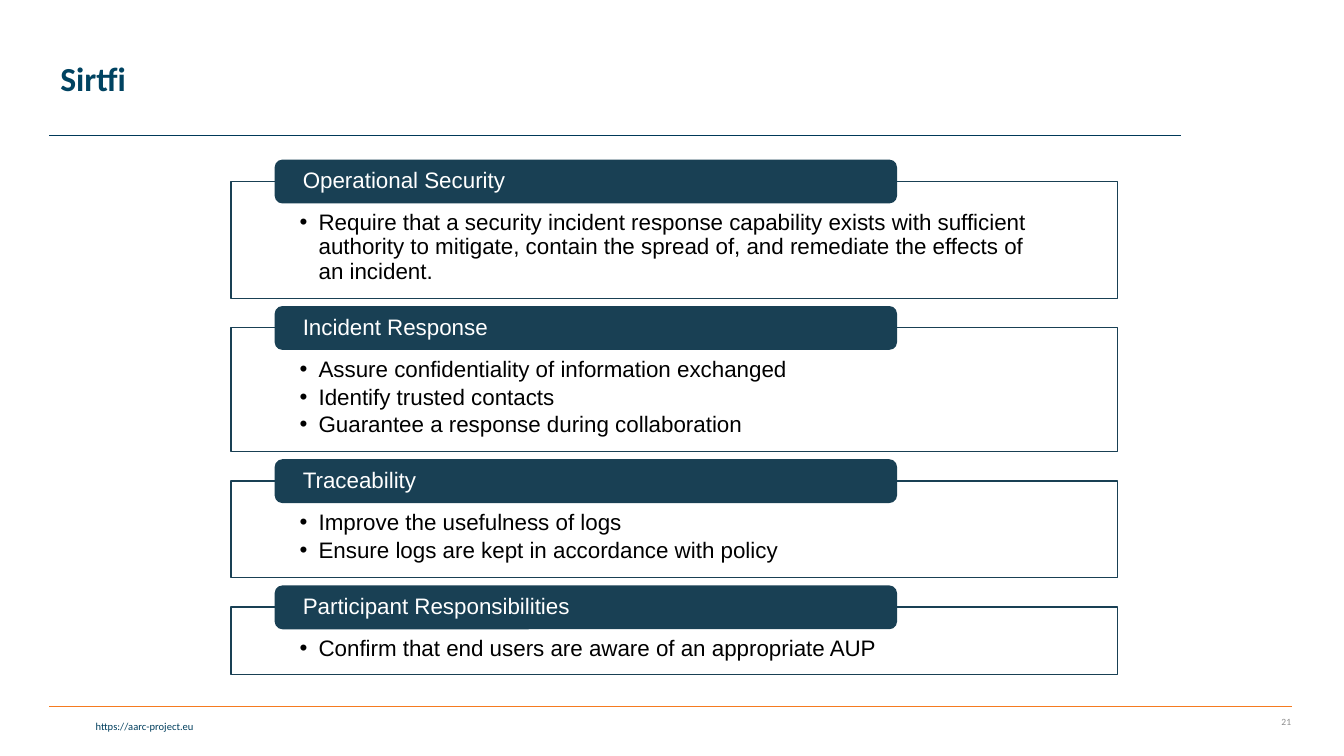
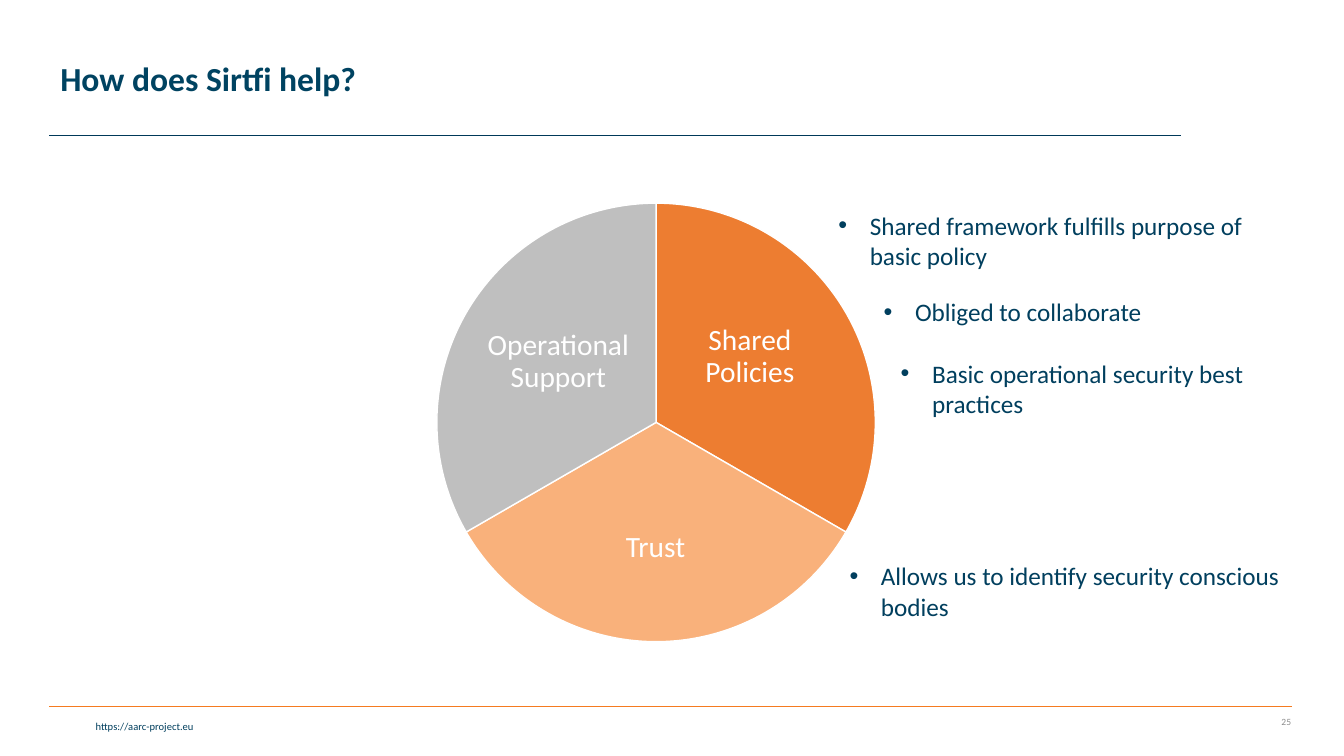
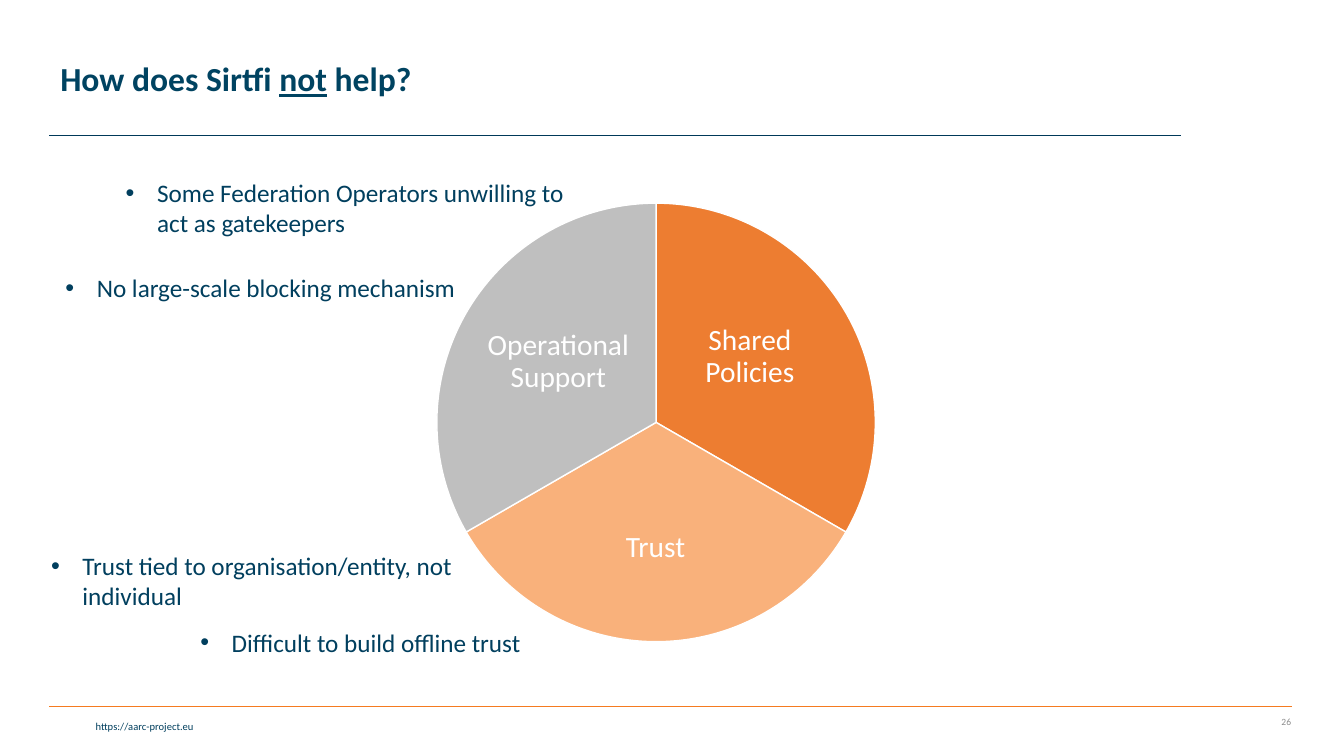
from lxml import etree
from pptx import Presentation
from pptx.dml.color import RGBColor
from pptx.enum.shapes import MSO_CONNECTOR, MSO_SHAPE
from pptx.enum.text import MSO_ANCHOR, MSO_AUTO_SIZE, PP_ALIGN
from pptx.oxml.ns import qn
from pptx.util import Cm, Pt

LEFT, CENTER, RIGHT = PP_ALIGN.LEFT, PP_ALIGN.CENTER, PP_ALIGN.RIGHT
TOP, MIDDLE = MSO_ANCHOR.TOP, MSO_ANCHOR.MIDDLE
RECTANGLE, ROUNDED = MSO_SHAPE.RECTANGLE, MSO_SHAPE.ROUNDED_RECTANGLE
PIE = MSO_SHAPE.PIE
STRAIGHT = MSO_CONNECTOR.STRAIGHT
NO_AUTOFIT = MSO_AUTO_SIZE.NONE
TITLE_ONLY = 5

# Palette
TITLE_BLUE = "004361"
RULE_BLUE = "003959"
FOOTER_BLUE = "003F5E"
TEXT_BLUE = "013F5E"
PANEL_BLUE = "194054"
RULE_ORANGE = "F57B20"
NUMBER_GRAY = "8C8C8C"
WHITE, BLACK = "FFFFFF", "000000"

# Panels of the first slide: heading, height, bullets
PANELS = [
    ("Operational Security", 2.95, [
        "Require that a security incident response capability exists with "
        "sufficient authority to mitigate, contain the spread of, and "
        "remediate the effects of an incident."]),
    ("Incident Response", 3.12, [
        "Assure confidentiality of information exchanged",
        "Identify trusted contacts",
        "Guarantee a response during collaboration"]),
    ("Traceability", 2.44, [
        "Improve the usefulness of logs",
        "Ensure logs are kept in accordance with policy"]),
    ("Participant Responsibilities", 1.7, [
        "Confirm that end users are aware of an appropriate AUP"]),
]
PANEL_TOP, PANEL_GAP = 4.57, 0.74

# Sectors of the circle: label, fill, opacity, start angle, label box
SECTORS = [
    ("Shared Policies", "ED7D31", 100, 270, (17.02, 7.16, 3.76, 3.68)),
    ("Trust", "F6791C", 58, 30, (14.02, 12.09, 5, 3.43)),
    ("Operational Support", "BFBFBF", 100, 150, (12.19, 7.29, 3.76, 3.68)),
]
SECTOR_ANGLE = 120
CIRCLE_BOX = (11.01, 5.12, 11.05, 11.05)

# Callouts around the circle: text, left, top, width, height
HELP_CALLOUTS = [
    ("Shared framework fulfills purpose of basic policy", 20.88, 5.16, 11.4, 1.8),
    ("Allows us to identify security conscious bodies", 21.16, 14, 11.68, 1.8),
    ("Obliged to collaborate", 22.02, 7.34, 11.4, 1.02),
    ("Basic operational security best practices", 22.45, 8.89, 11.4, 1.8),
]
LIMIT_CALLOUTS = [
    ("Some Federation Operators unwilling to act as gatekeepers",
     2.92, 4.34, 11.68, 1.8),
    ("Trust tied to organisation/entity, not individual", 1.04, 13.74, 11.68, 1.8),
    ("No large-scale blocking mechanism", 1.4, 6.73, 11.68, 1.02),
    ("Difficult to build offline trust", 4.8, 15.67, 11.68, 1.02),
]


def color(value):
    return RGBColor.from_string(value)


def add_bullet(paragraph, indent):
    properties = paragraph._p.get_or_add_pPr()
    properties.set("marL", str(Cm(indent)))
    properties.set("indent", str(-Cm(indent)))
    etree.SubElement(properties, qn("a:buFont"), typeface="Arial")
    etree.SubElement(properties, qn("a:buChar"), char="•")


def write(shape, paragraphs, size=18, ink=TEXT_BLUE, font="Calibri", bold=False,
          align=LEFT, anchor=TOP, insets=(0.25, 0.13, 0.25, 0.13), spacing=1.0,
          after=0, bullet_indent=0, underlined=""):
    """Fill a shape with formatted paragraphs, underlining one chosen word."""
    frame = shape.text_frame
    frame.word_wrap = True
    frame.auto_size = NO_AUTOFIT
    frame.vertical_anchor = anchor
    (frame.margin_left, frame.margin_top,
     frame.margin_right, frame.margin_bottom) = [Cm(inset) for inset in insets]
    for index, text in enumerate(paragraphs):
        paragraph = frame.add_paragraph() if index else frame.paragraphs[0]
        if bullet_indent:
            add_bullet(paragraph, bullet_indent)
        paragraph.alignment = align
        paragraph.line_spacing = spacing
        paragraph.space_after = Pt(after)
        for part in text.partition(underlined) if underlined else [text]:
            run = paragraph.add_run()
            run.text = part
            run.font.name = font
            run.font.size = Pt(size)
            run.font.bold = bold
            run.font.color.rgb = color(ink)
            if part == underlined:
                run.font.underline = True


class Deck:
    """Shared style plus the slide being built."""

    def __init__(self):
        self.presentation = Presentation()
        self.presentation.slide_width = Cm(33.87)
        self.presentation.slide_height = Cm(19.05)
        self.slide = None

    def new_slide(self, title, number, underlined=""):
        layout = self.presentation.slide_layouts[TITLE_ONLY]
        self.slide = self.presentation.slides.add_slide(layout)
        heading = self.slide.shapes.title
        heading.left, heading.top = Cm(1.27), Cm(0.2)
        heading.width, heading.height = Cm(26.7), Cm(3.68)
        write(heading, [title], size=24, ink=TITLE_BLUE, bold=True,
              anchor=MIDDLE, spacing=0.9, underlined=underlined)
        # Rules and footer
        self.rule(1.24, 29.77, 3.41, RULE_BLUE)
        self.rule(1.24, 32.56, 17.8, RULE_ORANGE)
        self.text((0.08, 18.01, 5.05, 0.58), ["https://aarc-project.eu"],
                  size=7.5, ink=FOOTER_BLUE, align=RIGHT)
        self.text((30.73, 17.8, 2.06, 0.76), [str(number)], size=6.8,
                  ink=NUMBER_GRAY, align=RIGHT, anchor=MIDDLE)

    def rule(self, start, end, top, ink):
        line = self.slide.shapes.add_connector(
            STRAIGHT, Cm(start), Cm(top), Cm(end), Cm(top))
        line.line.color.rgb = color(ink)
        line.line.width = Pt(1)
        etree.SubElement(line._element.spPr, qn("a:effectLst"))

    def text(self, box, paragraphs, **style):
        shape = self.slide.shapes.add_textbox(*[Cm(length) for length in box])
        write(shape, paragraphs, **style)

    def shape(self, kind, box, outline, fill=None, opacity=100):
        shape = self.slide.shapes.add_shape(kind, *[Cm(length) for length in box])
        shape.shadow.inherit = False
        shape.line.color.rgb = color(outline)
        shape.line.width = Pt(1)
        if fill is None:
            shape.fill.background()
        else:
            shape.fill.solid()
            shape.fill.fore_color.rgb = color(fill)
        if opacity < 100:
            value = shape._element.spPr.find(qn("a:solidFill")).find(qn("a:srgbClr"))
            etree.SubElement(value, qn("a:alpha"), val=str(opacity * 1000))
        return shape

    def panel(self, top, height, heading, bullets):
        frame = self.shape(RECTANGLE, (5.82, top, 22.35, height), PANEL_BLUE)
        write(frame, bullets, size=16, ink=BLACK, font="Arial", spacing=0.9,
              after=2.6, bullet_indent=0.48, insets=(1.73, 0.76, 1.73, 0.3))
        tab = self.shape(ROUNDED, (6.94, top - 0.53, 15.65, 1.07),
                         PANEL_BLUE, PANEL_BLUE)
        write(tab, [heading], size=16, ink=WHITE, font="Arial", spacing=0.9,
              anchor=MIDDLE, insets=(0.64, 0, 0.64, 0))

    def circle(self):
        for label, fill, opacity, start, box in SECTORS:
            sector = self.shape(PIE, CIRCLE_BOX, WHITE, fill, opacity)
            # Pie angles are stored in units of 0.6 per degree
            sector.adjustments[0] = start * 0.6
            sector.adjustments[1] = (start + SECTOR_ANGLE) % 360 * 0.6
            self.text(box, [label], size=21, ink=WHITE, align=CENTER,
                      anchor=MIDDLE, spacing=0.9, insets=(0.08,) * 4)

    def callouts(self, entries):
        for text, *box in entries:
            self.text(box, [text], bullet_indent=0.79)


def main():
    deck = Deck()

    # Four stacked panels
    deck.new_slide("Sirtfi", 21)
    top = PANEL_TOP
    for heading, height, bullets in PANELS:
        deck.panel(top, height, heading, bullets)
        top += height + PANEL_GAP

    # Circle with its benefits
    deck.new_slide("How does Sirtfi help?", 25)
    deck.circle()
    deck.callouts(HELP_CALLOUTS)

    # Circle with its limits
    deck.new_slide("How does Sirtfi not help?", 26, underlined="not")
    deck.circle()
    deck.callouts(LIMIT_CALLOUTS)

    deck.presentation.save("out.pptx")


if __name__ == "__main__":
    main()
